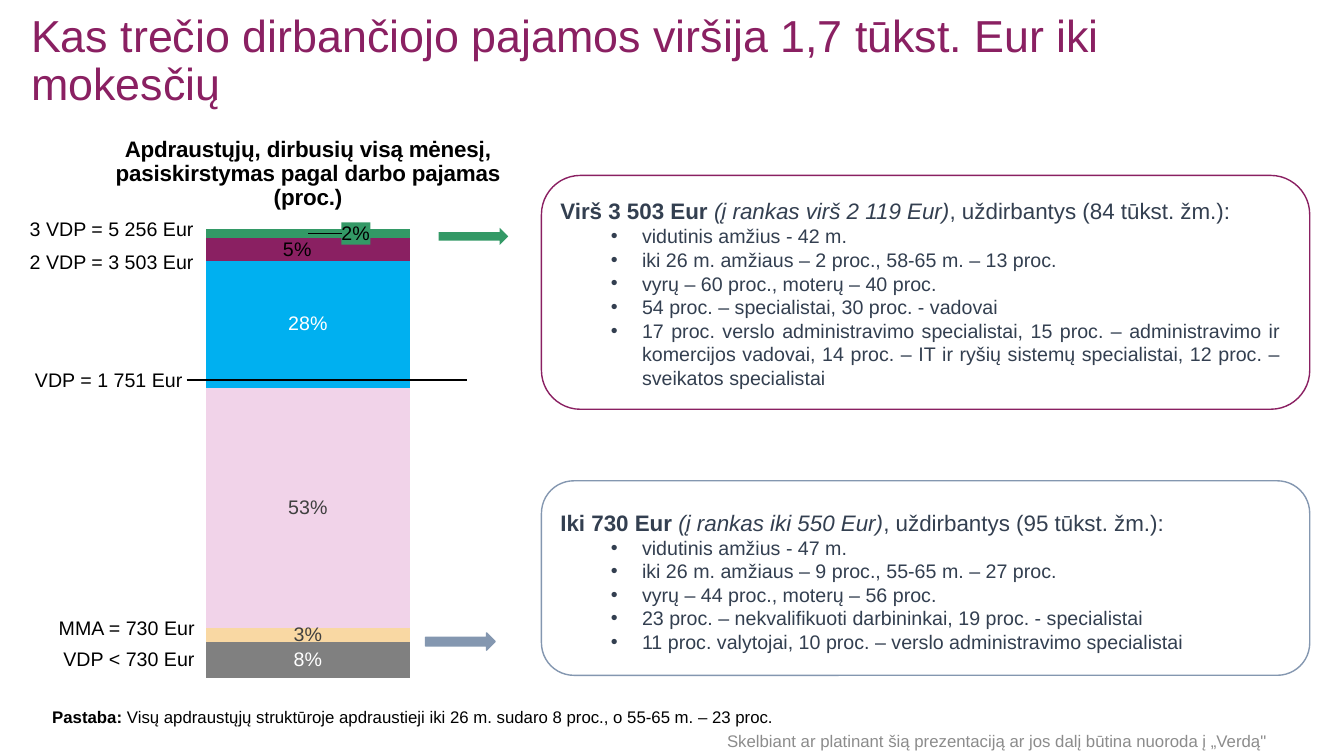
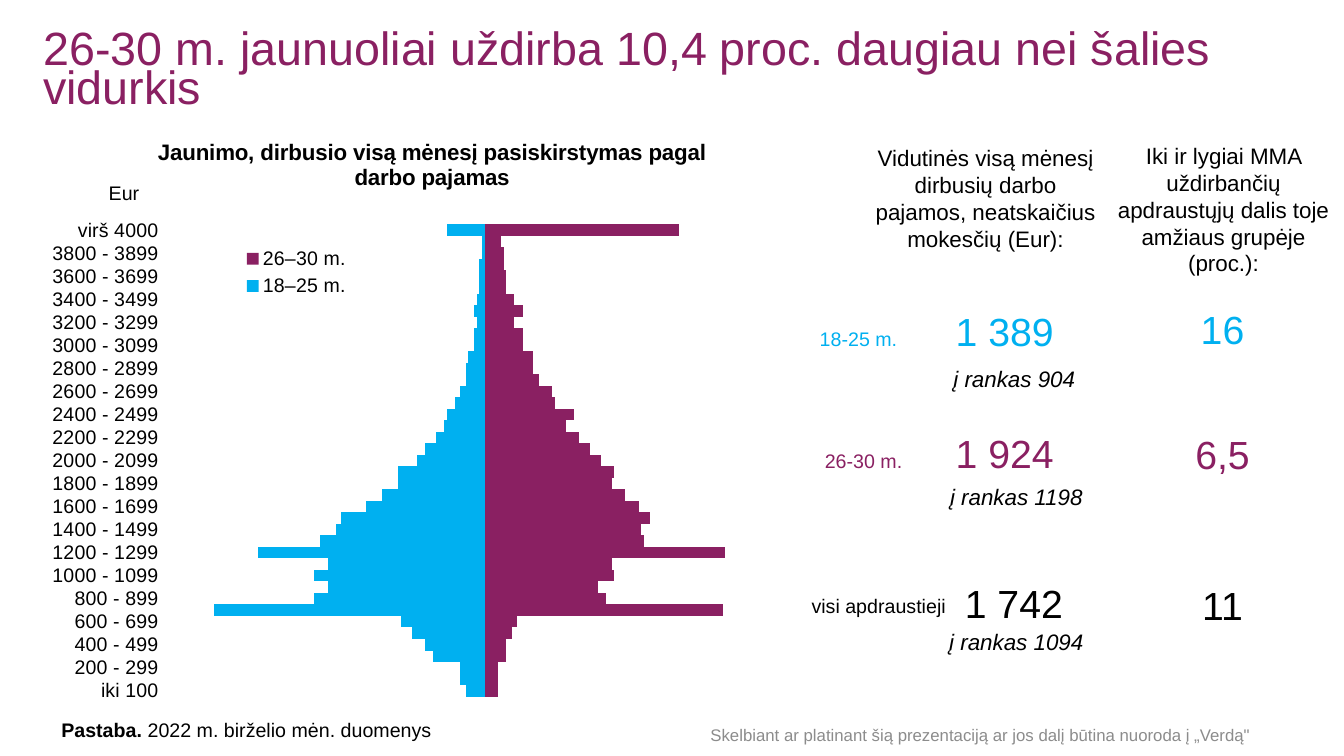
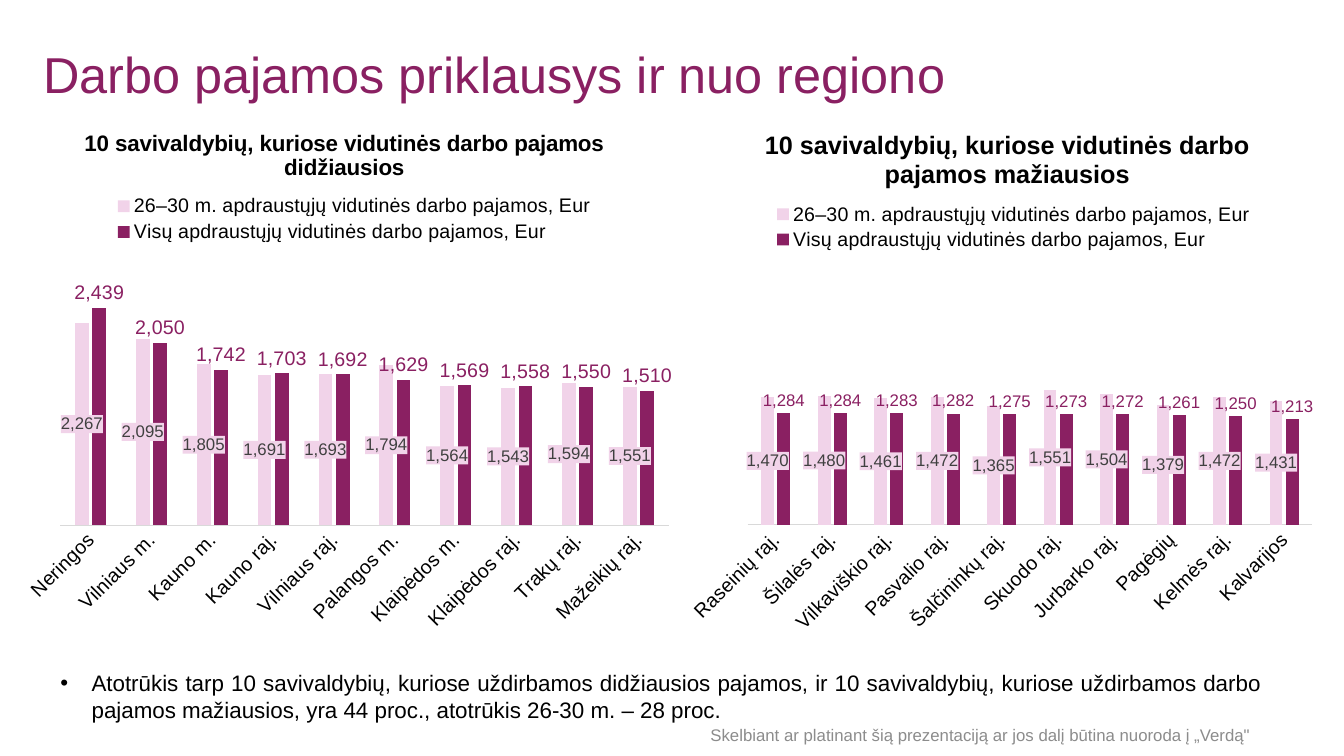
import lxml.etree
import pptx
import pptx.chart.data
import pptx.dml.color
import pptx.enum.chart
import pptx.enum.shapes
import pptx.enum.text
import pptx.oxml.ns
import pptx.util

Inches = pptx.util.Inches
Pt = pptx.util.Pt
qn = pptx.oxml.ns.qn
ALIGN = pptx.enum.text.PP_ALIGN
ANCHOR = pptx.enum.text.MSO_ANCHOR
SHAPE = pptx.enum.shapes.MSO_SHAPE
CHART = pptx.enum.chart.XL_CHART_TYPE
LEGEND = pptx.enum.chart.XL_LEGEND_POSITION
LABEL = pptx.enum.chart.XL_LABEL_POSITION
FONT = "Arial"
PLUM, PINK, SKY, GREEN = "8A2062", "F1D3E9", "00B0F0", "339966"
SAND, GREY, STEEL, NAVY = "F9D8A3", "808080", "8497B0", "333F50"
BLACK, WHITE, DARK, PALE, MUTED = "000000", "FFFFFF", "404040", "D9D9D9", "8C8C8C"
FOOTER = "Skelbiant ar platinant šią prezentaciją ar jos dalį būtina nuoroda į „Verdą\""


def rgb(colour):
    """Turn a hex string into a colour."""
    return pptx.dml.color.RGBColor.from_string(colour)


def style_font(font, size, colour=BLACK, bold=False, italic=False):
    """Apply the deck's typeface with the given look."""
    font.name, font.size, font.bold, font.italic = FONT, Pt(size), bold, italic
    font.color.rgb = rgb(colour)


def text_frame(slide, box, anchor=ANCHOR.TOP):
    """Add a wrapping text box and return its frame."""
    frame = slide.shapes.add_textbox(*map(Inches, box)).text_frame
    frame.word_wrap = True
    frame.vertical_anchor = anchor
    return frame


def add_text(slide, box, text, size, colour=BLACK, align=ALIGN.CENTER,
             anchor=ANCHOR.TOP, italic=False, spacing=None):
    """Add a text box with one paragraph."""
    paragraph = text_frame(slide, box, anchor).paragraphs[0]
    paragraph.text = text
    paragraph.alignment = align
    paragraph.line_spacing = spacing
    style_font(paragraph.font, size, colour, italic=italic)


def add_note(slide, box, lead, text, size):
    """Add a note that opens with a bold word."""
    paragraph = text_frame(slide, box).paragraphs[0]
    style_font(paragraph.font, size)
    opening = paragraph.add_run()
    opening.text = lead
    opening.font.bold = True
    paragraph.add_run().text = text


def make_bullet(paragraph, margin):
    """Give a paragraph a hanging, justified bullet."""
    paragraph.alignment = ALIGN.JUSTIFY
    properties = paragraph._p.get_or_add_pPr()
    properties.set("marL", str(Inches(margin)))
    properties.set("indent", str(Inches(-0.31)))
    lxml.etree.SubElement(properties, qn("a:buFont")).set("typeface", FONT)
    lxml.etree.SubElement(properties, qn("a:buChar")).set("char", "•")


def add_slide(deck, title, title_box, size, spacing, footer_box=(6.85, 7.09, 5.75, 0.4)):
    """Add a blank slide with its title and footer."""
    slide = deck.slides.add_slide(deck.slide_layouts[6])
    add_text(slide, title_box, title, size, PLUM, ALIGN.LEFT, ANCHOR.MIDDLE, spacing=spacing)
    add_text(slide, footer_box, FOOTER, 12, MUTED, anchor=ANCHOR.MIDDLE)
    return slide


def add_shape(slide, kind, box, fill=None, line=None):
    """Add a flat preset shape."""
    shape = slide.shapes.add_shape(kind, *map(Inches, box))
    shape.shadow.inherit = False
    if fill:
        shape.fill.solid()
        shape.fill.fore_color.rgb = rgb(fill)
    else:
        shape.fill.background()
    if line:
        shape.line.color.rgb = rgb(line)
        shape.line.width = Pt(1)
    else:
        shape.line.fill.background()


def add_rule(slide, left, right, top):
    """Add a thin black horizontal line."""
    rule = slide.shapes.add_connector(
        pptx.enum.shapes.MSO_CONNECTOR.STRAIGHT,
        Inches(left), Inches(top), Inches(right), Inches(top))
    rule.line.color.rgb = rgb(BLACK)
    rule.line.width = Pt(1)
    lxml.etree.SubElement(rule._element.spPr, qn("a:effectLst"))


def layout_element(**values):
    """Build a manual chart layout from its fields."""
    layout = lxml.etree.Element(qn("c:layout"))
    manual = lxml.etree.SubElement(layout, qn("c:manualLayout"))
    for tag, value in values.items():
        lxml.etree.SubElement(manual, qn("c:" + tag)).set("val", str(value))
    return layout


def clear_layout(parent):
    """Drop any layout already held by a chart part."""
    for old in parent.findall(qn("c:layout")):
        parent.remove(old)


def place_plot(chart, x, y, w, h):
    """Fix the inner plot area as shares of the chart."""
    area = chart._chartSpace.chart.plotArea
    clear_layout(area)
    area.insert(0, layout_element(layoutTarget="inner", xMode="edge", yMode="edge",
                                  x=x, y=y, w=w, h=h))


def add_legend(chart, position, x, y, w, h):
    """Show the legend in a fixed place."""
    chart.has_legend = True
    legend = chart.legend
    legend.position = position
    legend.include_in_layout = False
    style_font(legend.font, 14)
    clear_layout(legend._element)
    legend._element.find(qn("c:legendPos")).addnext(
        layout_element(xMode="edge", yMode="edge", x=x, y=y, w=w, h=h))


def fill_labels(element, colour):
    """Put a solid background behind data labels."""
    properties = lxml.etree.Element(qn("c:spPr"))
    solid = lxml.etree.SubElement(properties, qn("a:solidFill"))
    lxml.etree.SubElement(solid, qn("a:srgbClr")).set("val", colour)
    element.find(qn("c:txPr")).addprevious(properties)


def label_series(series, number_format, size, colour, position):
    """Show the values of a series."""
    labels = series.data_labels
    labels.show_value = True
    labels.number_format = number_format
    labels.number_format_is_linked = False
    labels.position = position
    style_font(labels.font, size, colour)
    return labels


def add_chart(slide, kind, box, categories, series, title, plot, gap, overlap,
              limits=(None, None), title_size=16, number_format="General"):
    """Add a titled chart without a value axis; series are (name, values, colour)."""
    data = pptx.chart.data.CategoryChartData(number_format=number_format)
    data.categories = categories
    for name, values, _ in series:
        data.add_series(name, values)
    chart = slide.shapes.add_chart(kind, *map(Inches, box), data).chart
    style_font(chart.font, 10)
    chart.has_legend = False
    chart.has_title = True
    heading = chart.chart_title.text_frame.paragraphs[0]
    heading.text = title
    style_font(heading.font, title_size, bold=True)
    chart.plots[0].vary_by_categories = False
    chart.plots[0].gap_width = gap
    chart.plots[0].overlap = overlap
    chart.value_axis.visible = False
    chart.value_axis.has_major_gridlines = False
    chart.value_axis.minimum_scale, chart.value_axis.maximum_scale = limits
    for item, (_, _, colour) in zip(chart.plots[0].series, series):
        item.format.fill.solid()
        item.format.fill.fore_color.rgb = rgb(colour)
        item.invert_if_negative = False
    place_plot(chart, *plot)
    return chart


def style_categories(axis):
    """Give a category axis a pale line and plain labels."""
    axis.major_tick_mark = pptx.enum.chart.XL_TICK_MARK.NONE
    axis.format.line.color.rgb = rgb(PALE)
    axis.format.line.width = Pt(0.75)
    style_font(axis.tick_labels.font, 14)


def income_stack(slide, box):
    """Draw the single stacked column of income bands."""
    bands = [(0.08, GREY, WHITE), (0.03, SAND, DARK), (0.53, PINK, DARK),
             (0.28, SKY, WHITE), (0.05, PLUM, BLACK), (0.02, GREEN, BLACK)]
    series = [(f"Series {n}", [share], fill) for n, (share, fill, _) in enumerate(bands, 1)]
    chart = add_chart(
        slide, CHART.COLUMN_STACKED_100, box, ["1"], series,
        "Apdraustųjų, dirbusių visą mėnesį, pasiskirstymas pagal darbo pajamas (proc.)",
        (0.02, 0.2, 0.96, 0.78), 150, 100, number_format="0%")
    chart.category_axis.visible = False
    stacks = list(chart.plots[0].series)
    for stack, (_, _, ink) in zip(stacks, bands):
        label_series(stack, "0%", 14, ink, LABEL.CENTER)
    for stack, shift in ((stacks[4], -0.02), (stacks[5], 0.09)):
        style_font(stack.points[0].data_label.font, 14)
        label = stack.data_labels._element.find(qn("c:dLbl"))
        label.find(qn("c:idx")).addnext(layout_element(x=shift, y=0))
    fill_labels(label, GREEN)


def callout(slide, box, text_drop, outline, lead, aside, rest, points):
    """Draw a rounded frame with a heading and bullets."""
    left, top, width, height = box
    frame = text_frame(slide, (left + 0.09, top + text_drop, width - 0.28, height - 0.3))
    heading = frame.paragraphs[0]
    heading.alignment = ALIGN.JUSTIFY
    style_font(heading.font, 16, NAVY)
    for text, bold, italic in ((lead, True, False), (aside, False, True), (rest, False, False)):
        run = heading.add_run()
        run.text, run.font.bold, run.font.italic = text, bold, italic
    for point in points:
        paragraph = frame.add_paragraph()
        paragraph.text = point
        paragraph.level = 1
        style_font(paragraph.font, 14, NAVY)
        make_bullet(paragraph, 0.81)
    add_shape(slide, SHAPE.ROUNDED_RECTANGLE, box, line=outline)


def build_income_slide(deck):
    """Build the slide on income bands."""
    slide = add_slide(deck, "Kas trečio dirbančiojo pajamos viršija 1,7 tūkst. Eur iki mokesčių",
                      (0.21, 0.17, 12.78, 0.89), 32, 0.9, (6.98, 7.15, 5.82, 0.4))
    income_stack(slide, (0.42, 1.13, 5.27, 5.71))
    thresholds = [("3 VDP = 5 256 Eur", 2.02, 2.1), ("2 VDP = 3 503 Eur", 2.02, 2.43),
                  ("VDP = 1 751 Eur", 1.91, 3.6), ("MMA = 730 Eur", 2.03, 6.06),
                  ("VDP < 730 Eur", 2.03, 6.37)]
    for text, right, top in thresholds:
        add_text(slide, (0, top, right, 0.34), text, 14, align=ALIGN.RIGHT)
    callout(slide, (5.37, 1.74, 7.62, 2.32), 0.17, PLUM,
            "Virš 3 503 Eur ", "(į rankas virš 2 119 Eur)", ", uždirbantys (84 tūkst. žm.):",
            ["vidutinis amžius - 42 m.",
             "iki 26 m. amžiaus – 2 proc., 58-65 m. – 13 proc.",
             "vyrų – 60 proc., moterų – 40 proc.",
             "54 proc. – specialistai, 30 proc. - vadovai",
             "17 proc. verslo administravimo specialistai, 15 proc. – administravimo ir "
             "komercijos vadovai, 14 proc. – IT ir ryšių sistemų specialistai, 12 proc. – "
             "sveikatos specialistai"])
    callout(slide, (5.37, 4.77, 7.62, 1.93), 0.23, STEEL,
            "Iki 730 Eur ", "(į rankas iki 550 Eur)", ", uždirbantys (95 tūkst. žm.):",
            ["vidutinis amžius - 47 m.",
             "iki 26 m. amžiaus – 9 proc., 55-65 m. – 27 proc.",
             "vyrų – 44 proc., moterų – 56 proc.",
             "23 proc. – nekvalifikuoti darbininkai, 19 proc. - specialistai",
             "11 proc. valytojai, 10 proc. – verslo administravimo specialistai"])
    add_shape(slide, SHAPE.RIGHT_ARROW, (4.35, 2.26, 0.69, 0.17), GREEN)
    add_shape(slide, SHAPE.RIGHT_ARROW, (4.22, 6.28, 0.69, 0.17), STEEL, STEEL)
    add_rule(slide, 1.85, 4.63, 3.77)
    add_note(slide, (0.42, 6.96, 7.86, 0.3), "Pastaba: ",
             "Visų apdraustųjų struktūroje apdraustieji iki 26 m. sudaro 8 proc., "
             "o 55-65 m. – 23 proc.", 12)


def income_pyramid(slide, box):
    """Draw the income pyramid of two age groups."""
    older = [5, 5, 5, 8, 8, 10, 12, 88, 45, 42, 48, 47, 89, 59, 58, 61, 57, 52, 47, 48, 43,
             39, 35, 30, 33, 26, 25, 20, 18, 18, 14, 14, 11, 14, 11, 8, 8, 7, 7, 6, 72]
    younger = [7, 9, 9, 19, 22, 27, 31, 100, 63, 58, 63, 58, 84, 61, 55, 53, 44, 38, 32, 32, 25,
               22, 18, 15, 14, 11, 9, 7, 7, 6, 4, 4, 3, 4, 3, 2, 2, 2, 1, 1, 14]
    steps = [f"{low} - {low + 99}" for low in range(100, 4000, 100)]
    chart = add_chart(
        slide, CHART.BAR_STACKED, box, ["iki 100", *steps, "virš 4000"],
        [("26–30 m.", older, PLUM), ("18–25 m.", [-share for share in younger], SKY)],
        "Jaunimo, dirbusio visą mėnesį pasiskirstymas pagal darbo pajamas",
        (0.15, 0.18, 0.84, 0.79), 0, 100, (-117, 117))
    style_categories(chart.category_axis)
    chart.category_axis.tick_label_position = pptx.enum.chart.XL_TICK_LABEL_POSITION.LOW
    add_legend(chart, LEGEND.BOTTOM, 0.23, 0.21, 0.18, 0.1)


def age_row(slide, group, group_at, pay, pay_at, net, net_at, share, share_top, colour):
    """Write the figures of one age group."""
    add_text(slide, (*group_at, 2.19, 0.34), group, 14, colour)
    add_text(slide, (*pay_at, 1.21, 0.57), pay, 28, colour)
    add_text(slide, (*net_at, 1.6, 0.37), net, 16, italic=True)
    add_text(slide, (11.52, share_top, 1.21, 0.57), share, 28, colour)


def build_youth_slide(deck):
    """Build the slide on young people's income."""
    slide = add_slide(deck, "26-30 m. jaunuoliai uždirba 10,4 proc. daugiau nei šalies vidurkis",
                      (0.33, 0.28, 12.87, 0.89), 33.3, 0.7)
    income_pyramid(slide, (0.52, 1.16, 7.5, 5.93))
    add_text(slide, (0.68, 1.75, 1.1, 0.34), "Eur", 14)
    add_text(slide, (8.51, 1.38, 2.53, 1.18),
             "Vidutinės visą mėnesį dirbusių darbo pajamos, neatskaičius mokesčių (Eur):", 16)
    add_text(slide, (10.96, 1.36, 2.35, 1.45),
             "Iki ir lygiai MMA uždirbančių apdraustųjų dalis toje amžiaus grupėje (proc.):", 16)
    age_row(slide, "18-25 m.", (7.42, 3.19), "1 389", (9.36, 3),
            "į rankas 904", (9.26, 3.57), "16", 2.98, SKY)
    age_row(slide, "26-30 m.", (7.47, 4.4), "1 924", (9.36, 4.21),
            "į rankas 1198", (9.28, 4.74), "6,5", 4.22, PLUM)
    age_row(slide, "visi apdraustieji", (7.62, 5.84), "1 742", (9.45, 5.7),
            "į rankas 1094", (9.28, 6.18), "11", 5.72, BLACK)
    add_note(slide, (0.51, 7.07, 6, 0.34), "Pastaba. ", "2022 m. birželio mėn. duomenys", 14)


def region_chart(slide, box, title, title_size, towns, young, everyone, plot, legend, label_size):
    """Draw paired columns of income by municipality."""
    chart = add_chart(
        slide, CHART.COLUMN_CLUSTERED, box, towns,
        [("26–30 m. apdraustųjų vidutinės darbo pajamos, Eur", young, PINK),
         ("Visų apdraustųjų vidutinės darbo pajamos, Eur", everyone, PLUM)],
        title, plot, 219, -27, (0, 3000), title_size)
    style_categories(chart.category_axis)
    chart.category_axis._element.find(qn("c:txPr")).find(qn("a:bodyPr")).set("rot", "-2700000")
    add_legend(chart, LEGEND.TOP, *legend)
    young_columns, all_columns = chart.plots[0].series
    labels = label_series(young_columns, "#,##0", 12, DARK, LABEL.CENTER)
    fill_labels(labels._element, PINK)
    label_series(all_columns, "#,##0", label_size, PLUM, LABEL.OUTSIDE_END)


def build_region_slide(deck):
    """Build the slide on income by region."""
    slide = add_slide(deck, "Darbo pajamos priklausys ir nuo regiono",
                      (0.33, 0.32, 12.87, 0.89), 36, 0.9)
    region_chart(
        slide, (0.06, 1.07, 6.71, 5.52),
        "10 savivaldybių, kuriose vidutinės darbo pajamos didžiausios", 16,
        ["Neringos", "Vilniaus m.", "Kauno m.", "Kauno raj.", "Vilniaus raj.", "Palangos m.",
         "Klaipėdos m.", "Klaipėdos raj.", "Trakų raj.", "Mažeikių raj."],
        [2267, 2095, 1805, 1691, 1693, 1794, 1564, 1543, 1594, 1551],
        [2439, 2050, 1742, 1703, 1692, 1629, 1569, 1558, 1550, 1510],
        (0.08, 0.27, 0.9, 0.48), (0.14, 0.15, 0.75, 0.1), 14)
    region_chart(
        slide, (6.77, 1.07, 6.44, 5.37),
        "10 savivaldybių, kuriose vidutinės darbo pajamos mažiausios", 18,
        ["Raseinių raj.", "Šilalės raj.", "Vilkaviškio raj.", "Pasvalio raj.",
         "Šalčininkų raj.", "Skuodo raj.", "Jurbarko raj.", "Pagėgių", "Kelmės raj.",
         "Kalvarijos"],
        [1470, 1480, 1461, 1472, 1365, 1551, 1504, 1379, 1472, 1431],
        [1284, 1284, 1283, 1282, 1275, 1273, 1272, 1261, 1250, 1213],
        (0.1, 0.29, 0.87, 0.48), (0.12, 0.17, 0.78, 0.1), 12)
    gap_note = text_frame(slide, (0.5, 6.59, 12.11, 0.64)).paragraphs[0]
    gap_note.text = ("Atotrūkis tarp 10 savivaldybių, kuriose uždirbamos didžiausios pajamos, "
                     "ir 10 savivaldybių, kuriose uždirbamos darbo pajamos mažiausios, "
                     "yra 44 proc., atotrūkis 26-30 m. – 28 proc.")
    style_font(gap_note.font, 16)
    make_bullet(gap_note, 0.31)


def main():
    """Build and save the deck."""
    deck = pptx.Presentation()
    deck.slide_width, deck.slide_height = Inches(13.33), Inches(7.5)
    build_income_slide(deck)
    build_youth_slide(deck)
    build_region_slide(deck)
    deck.save("out.pptx")


if __name__ == "__main__":
    main()
